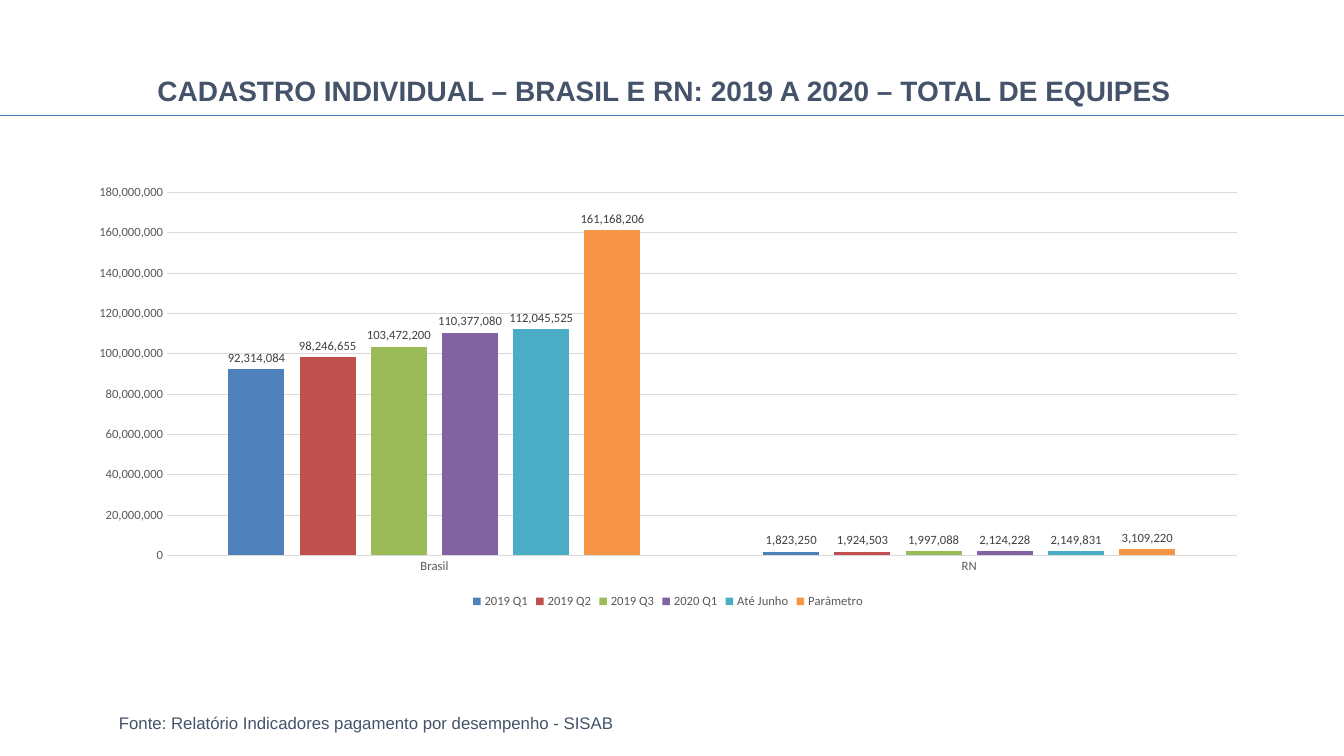
import pptx
import pptx.chart.data
import pptx.dml.color
import pptx.enum.chart
import pptx.enum.shapes
import pptx.enum.text
import pptx.oxml
import pptx.util
from pptx.util import Inches

TITLE = "CADASTRO INDIVIDUAL – BRASIL E RN: 2019 A 2020 – TOTAL DE EQUIPES"
SOURCE = "Fonte: Relatório Indicadores pagamento por desempenho - SISAB"
NAVY = "44536A"
GRID_GRAY = "D9D9D9"
AXIS_GRAY = "595959"
LABEL_GRAY = "404040"
NUMBER_FORMAT = "#,##0"
REGIONS = ["Brasil", "RN"]
REGISTRATIONS = [
    ("2019 Q1", (92314084, 1823250), "4F81BD"),
    ("2019 Q2", (98246655, 1924503), "C0504D"),
    ("2019 Q3", (103472200, 1997088), "9BBB59"),
    ("2020 Q1", (110377080, 2124228), "8064A2"),
    ("Até Junho", (112045525, 2149831), "4BACC6"),
    ("Parâmetro", (161168206, 3109220), "F79646"),
]


def rgb(value):
    return pptx.dml.color.RGBColor.from_string(value)


def set_attributes(target, values):
    for name, value in values.items():
        setattr(target, name, value)


def format_font(font, size, color, name="Calibri", bold=False):
    set_attributes(font, {"size": pptx.util.Pt(size), "name": name, "bold": bold})
    font.color.rgb = rgb(color)


def format_line(line, color):
    line.color.rgb = rgb(color)
    line.width = pptx.util.Pt(0.75)


def fill_text(shape, text, size, anchor, left=0, top=0, bold=False):
    """Write one left-aligned navy line with the given insets."""
    frame = shape.text_frame
    set_attributes(frame, {
        "text": text,
        "word_wrap": True,
        "auto_size": pptx.enum.text.MSO_AUTO_SIZE.NONE,
        "vertical_anchor": anchor,
        "margin_left": Inches(left),
        "margin_top": Inches(top),
        "margin_right": 0,
        "margin_bottom": 0,
    })
    paragraph = frame.paragraphs[0]
    paragraph.alignment = pptx.enum.text.PP_ALIGN.LEFT
    format_font(paragraph.font, size, NAVY, "Arial", bold)


def add_title(slide):
    title = slide.shapes.title
    set_attributes(title, {"left": Inches(0.43), "top": Inches(0.39),
                           "width": Inches(12.47), "height": Inches(0.68)})
    fill_text(title, TITLE, 20, pptx.enum.text.MSO_ANCHOR.TOP,
              left=1.13, top=0.34, bold=True)


def add_rule(slide):
    rule = slide.shapes.add_connector(
        pptx.enum.shapes.MSO_CONNECTOR.STRAIGHT,
        0, Inches(1.15), Inches(13.33), Inches(1.15))
    format_line(rule.line, "497DBA")
    effects = pptx.oxml.parse_xml(
        '<a:effectLst xmlns:a="http://schemas.openxmlformats.org/drawingml/2006/main"/>')
    rule._element.spPr.append(effects)


def add_source(slide):
    source = slide.shapes.add_textbox(
        Inches(1.17), Inches(6.68), Inches(6.23), Inches(0.59))
    fill_text(source, SOURCE, 12, pptx.enum.text.MSO_ANCHOR.BOTTOM, left=0.01)


def format_axes(chart):
    for axis in (chart.category_axis, chart.value_axis):
        axis.major_tick_mark = pptx.enum.chart.XL_TICK_MARK.NONE
        axis.minor_tick_mark = pptx.enum.chart.XL_TICK_MARK.NONE
        format_font(axis.tick_labels.font, 9, AXIS_GRAY)
    format_line(chart.category_axis.format.line, GRID_GRAY)
    values = chart.value_axis
    set_attributes(values, {"minimum_scale": 0, "maximum_scale": 180000000,
                            "major_unit": 20000000})
    set_attributes(values.tick_labels, {"number_format": NUMBER_FORMAT,
                                        "number_format_is_linked": False})
    values.format.line.fill.background()
    format_line(values.major_gridlines.format.line, GRID_GRAY)


def format_series(series, color):
    series.invert_if_negative = False
    series.format.fill.solid()
    series.format.fill.fore_color.rgb = rgb(color)
    labels = series.data_labels
    set_attributes(labels, {
        "show_value": True,
        "number_format": NUMBER_FORMAT,
        "number_format_is_linked": False,
        "position": pptx.enum.chart.XL_LABEL_POSITION.OUTSIDE_END,
    })
    format_font(labels.font, 9, LABEL_GRAY)


def add_registration_chart(slide):
    data = pptx.chart.data.CategoryChartData(number_format=NUMBER_FORMAT)
    data.categories = REGIONS
    for name, values, _ in REGISTRATIONS:
        data.add_series(name, values)
    chart = slide.shapes.add_chart(
        pptx.enum.chart.XL_CHART_TYPE.COLUMN_CLUSTERED,
        Inches(0.75), Inches(1.75), Inches(11.75), Inches(4.33), data).chart
    set_attributes(chart, {"has_title": False, "has_legend": True})
    format_font(chart.font, 10, "000000")
    set_attributes(chart.legend, {
        "position": pptx.enum.chart.XL_LEGEND_POSITION.BOTTOM,
        "include_in_layout": False,
    })
    format_font(chart.legend.font, 9, AXIS_GRAY)
    format_axes(chart)
    plot = chart.plots[0]
    set_attributes(plot, {"gap_width": 219, "overlap": -27,
                          "vary_by_categories": False})
    for series, (_, _, color) in zip(plot.series, REGISTRATIONS):
        format_series(series, color)


def main():
    deck = pptx.Presentation()
    set_attributes(deck, {"slide_width": Inches(13.33),
                          "slide_height": Inches(7.5)})
    slide = deck.slides.add_slide(deck.slide_layouts.get_by_name("Title Only"))
    add_rule(slide)
    add_title(slide)
    add_source(slide)
    add_registration_chart(slide)
    deck.save("out.pptx")


if __name__ == "__main__":
    main()
